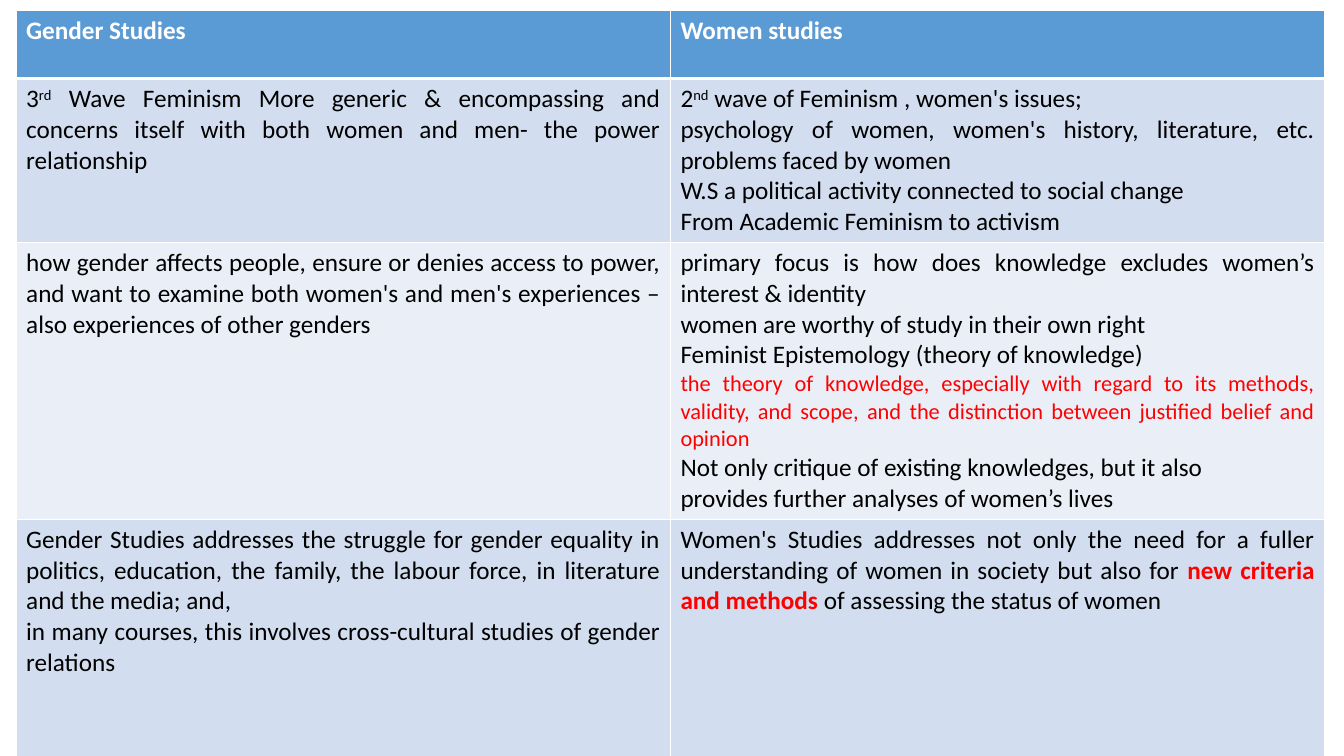
from lxml import etree
from pptx import Presentation
from pptx.dml.color import RGBColor
from pptx.enum.text import PP_ALIGN
from pptx.oxml.ns import qn
from pptx.util import Emu, Pt

JUSTIFY = PP_ALIGN.JUSTIFY
LEFT = PP_ALIGN.LEFT
PX = 9144  # EMU per px, 100 px to the inch

WHITE, BLACK, RED = "FFFFFF", "000000", "FF0000"
HEADER_FILL = "5B9BD5"
BAND_FILLS = ("D2DEEF", "EAEFF7")

SUPER = {"baseline": 30}
KEY_TERMS = {"color": RED, "bold": True}
DEFINITION = {"color": RED, "size": 16}

COLUMN_WIDTH = 649
ROW_HEIGHTS = (68, 138, 266, 268)
HEADINGS = ("Gender Studies", "Women studies")

# Each cell is a list of paragraphs: plain text, or a list of (text, format) runs.
COMPARISON = [
    (
        [[("3", {}), ("rd", SUPER),
          (" Wave Feminism More generic & encompassing and concerns itself with "
           "both women and men- the power relationship", {})]],
        [[("2", {}), ("nd", SUPER), (" wave of Feminism , women's issues;", {})],
         "psychology of women, women's history, literature, etc. problems faced by women",
         "W.S a political activity connected to social change",
         "From Academic Feminism to activism"],
    ),
    (
        ["how gender affects people, ensure or denies access to power, and want to examine "
         "both women's and men's experiences – also experiences of other genders"],
        ["primary focus is how does knowledge excludes women’s interest & identity",
         "women are worthy of study in their own right",
         "Feminist Epistemology (theory of knowledge)",
         [("the theory of knowledge, especially with regard to its methods, validity, and "
           "scope, and the distinction between justified belief and opinion", DEFINITION)],
         [("Not only critique of existing knowledges, but it also", {"align": LEFT})],
         [("provides further analyses of women’s lives", {"align": LEFT})]],
    ),
    (
        ["Gender Studies addresses the struggle for gender equality in politics, education, "
         "the family, the labour force, in literature and the media; and,",
         "in many courses, this involves cross-cultural studies of gender relations"],
        [[("Women's Studies addresses not only the need for a fuller understanding of women "
           "in society but also for ", {}),
          ("new criteria and methods", KEY_TERMS),
          (" of assessing the status of women", {})]],
    ),
]


def rgb(hex_color):
    return RGBColor.from_string(hex_color)


def add_text(paragraph, text, *, font="Calibri", size=18, color=BLACK, bold=False,
             align=JUSTIFY, baseline=0):
    """Append a formatted run; baseline is the raise in percent."""
    paragraph.alignment = align
    run = paragraph.add_run()
    run.text = text
    run.font.name = font
    run.font.size = Pt(size)
    run.font.bold = bold
    run.font.color.rgb = rgb(color)
    if baseline:
        run._r.get_or_add_rPr().set("baseline", str(baseline * 1000))


class ComparisonSlide:
    def __init__(self, presentation):
        self.slide = presentation.slides.add_slide(presentation.slide_layouts[6])
        self.border_color = WHITE

    def table(self, left, top, column_widths, row_heights):
        frame = self.slide.shapes.add_table(
            len(row_heights), len(column_widths), Emu(left * PX), Emu(top * PX),
            Emu(sum(column_widths) * PX), Emu(sum(row_heights) * PX))
        for column, width in zip(frame.table.columns, column_widths):
            column.width = Emu(width * PX)
        for row, height in zip(frame.table.rows, row_heights):
            row.height = Emu(height * PX)
        return frame.table

    def cell(self, cell, paragraphs, fill, top=1, bottom=1, **text_format):
        """Fill a cell; top and bottom are border widths in points."""
        cell.fill.solid()
        cell.fill.fore_color.rgb = rgb(fill)
        self.borders(cell, {"lnL": 1, "lnR": 1, "lnT": top, "lnB": bottom})
        for index, runs in enumerate(paragraphs):
            frame = cell.text_frame
            paragraph = frame.add_paragraph() if index else frame.paragraphs[0]
            if isinstance(runs, str):
                runs = [(runs, {})]
            for text, run_format in runs:
                add_text(paragraph, text, **{**text_format, **run_format})

    def borders(self, cell, widths):
        properties = cell._tc.get_or_add_tcPr()
        for position, (side, width) in enumerate(widths.items()):
            line = etree.Element(qn(f"a:{side}"), w=str(Pt(width)))
            solid = etree.SubElement(line, qn("a:solidFill"))
            etree.SubElement(solid, qn("a:srgbClr"), val=self.border_color)
            properties.insert(position, line)


def main():
    presentation = Presentation()
    presentation.slide_width = Emu(1333 * PX)
    presentation.slide_height = Emu(750 * PX)
    page = ComparisonSlide(presentation)
    table = page.table(16, 10, [COLUMN_WIDTH] * len(HEADINGS), ROW_HEIGHTS)

    for column, heading in enumerate(HEADINGS):
        page.cell(table.cell(0, column), [heading], HEADER_FILL, bottom=3,
                  color=WHITE, bold=True, align=LEFT)
    for row, contents in enumerate(COMPARISON, start=1):
        for column, paragraphs in enumerate(contents):
            page.cell(table.cell(row, column), paragraphs, BAND_FILLS[(row - 1) % 2],
                      top=3 if row == 1 else 1)

    presentation.save("out.pptx")


if __name__ == "__main__":
    main()
